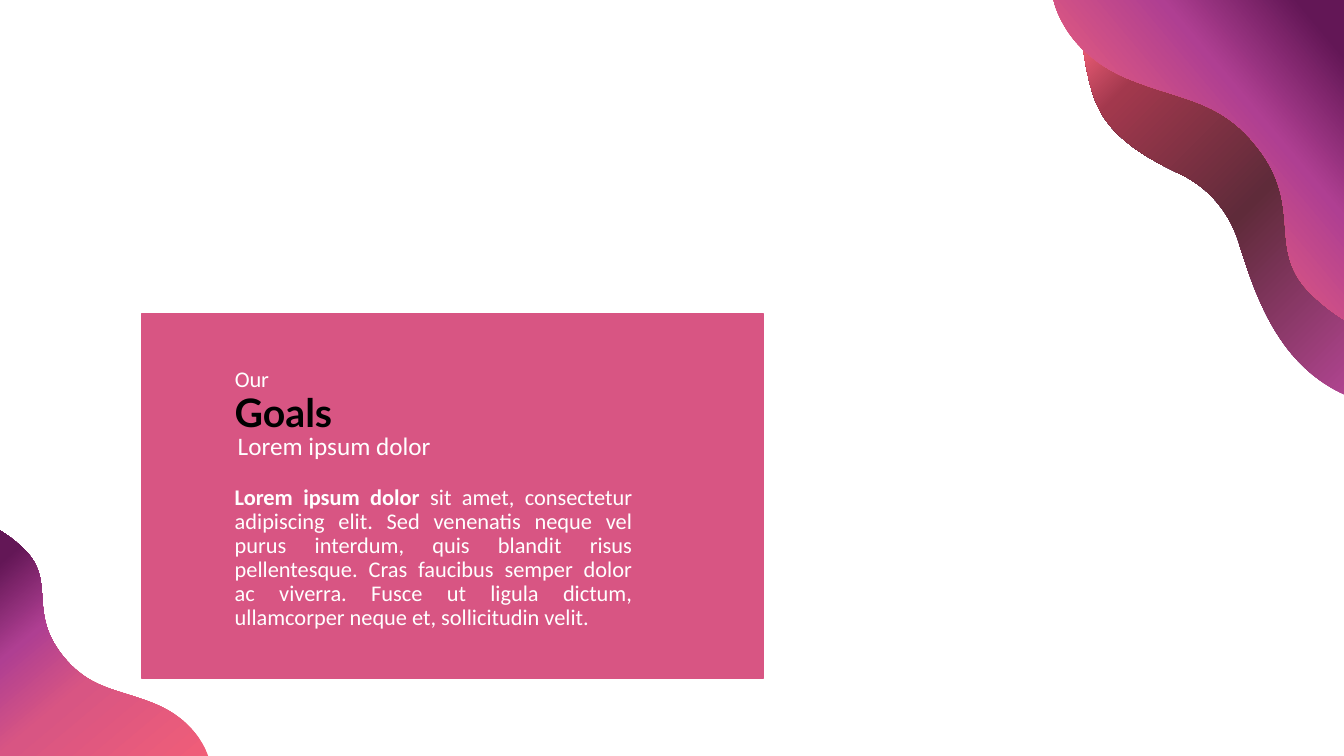
"""Build the "Our Goals" slide with a pink panel and wavy corner shapes."""
import copy

import lxml.etree
import pptx
import pptx.dml.color
import pptx.enum.shapes
import pptx.enum.text
import pptx.oxml.ns
import pptx.util

Inches = pptx.util.Inches
RGBColor = pptx.dml.color.RGBColor
qn = pptx.oxml.ns.qn

WHITE = RGBColor(0xFF, 0xFF, 0xFF)
BLACK = RGBColor(0x00, 0x00, 0x00)
PINK = RGBColor(0xD8, 0x55, 0x83)
CORAL = RGBColor(0xF1, 0x5E, 0x78)
ORCHID = RGBColor(0xAF, 0x3F, 0x92)
PLUM = RGBColor(0x63, 0x17, 0x56)
MAGENTA = RGBColor(0xB2, 0x45, 0x92)
MAROON = RGBColor(0x5F, 0x2B, 0x3A)
CRIMSON = RGBColor(0xA2, 0x38, 0x4D)
ROSE = RGBColor(0xF1, 0x5F, 0x79)

BRIGHT = [(0, CORAL), (0.44, PINK), (0.67, ORCHID), (0.91, PLUM)]
SHADED = [(0, MAGENTA), (0.44, MAROON), (0.8, CRIMSON), (0.94, ROSE)]

BACK_WAVE = [
    (10.72, 0), (10.72, 0), (10.69, 0.39), (10.82, 0.87),
    (10.9, 1.16), (11.06, 1.42), (11.67, 1.71),
    (12.03, 1.87), (12.22, 2.16), (12.3, 2.45),
    (12.48, 3.02), (12.72, 3.66), (13.39, 3.94),
]
FRONT_WAVE = [
    (10.45, 0), (10.45, 0), (10.55, 0.53), (11.21, 0.79),
    (11.73, 1), (12.11, 0.99), (12.48, 1.47),
    (12.95, 2.08), (12.54, 2.49), (13.03, 2.94),
    (13.21, 3.11), (13.38, 3.2), (13.38, 3.2),
]
LOWER_WAVE = [
    (2.08, 7.55), (2.08, 7.55), (2, 7.17), (1.53, 6.98),
    (1.16, 6.83), (0.88, 6.84), (0.61, 6.49),
    (0.27, 6.05), (0.57, 5.75), (0.22, 5.43),
    (0.08, 5.3), (-0.04, 5.24), (-0.04, 5.24),
]

BODY = [
    ("Lorem ipsum dolor ", True),
    ("sit amet, consectetur adipiscing elit. Sed venenatis neque vel purus "
     "interdum, quis blandit risus pellentesque. Cras faucibus semper dolor ac "
     "viverra. Fusce ut ligula dictum, ullamcorper neque et, sollicitudin velit.",
     False),
]


def bend_edge(sp, nodes):
    """Replace the first straight segment of a freeform with Bezier curves."""
    line = sp._element.find(".//" + qn("a:lnTo"))
    for i in range(1, len(nodes), 3):
        curve = lxml.etree.Element(qn("a:cubicBezTo"))
        for x, y in nodes[i:i + 3]:
            lxml.etree.SubElement(curve, qn("a:pt"), x=str(Inches(x) - sp.left),
                                  y=str(Inches(y) - sp.top))
        line.addprevious(curve)
    line.getparent().remove(line)


def add_wave(shapes, nodes, stops, angle):
    """Add a gradient shape between a wavy edge and its slide corner."""
    corner = (nodes[-1][0], nodes[0][1])
    start, end, corner = [(Inches(x), Inches(y)) for x, y in (nodes[0], nodes[-1], corner)]
    builder = shapes.build_freeform(*start)
    builder.add_line_segments([end, corner], close=True)
    sp = builder.convert_to_shape()
    bend_edge(sp, nodes)
    sp.shadow.inherit = False
    sp.line.fill.background()
    sp.fill.gradient()
    sp.fill.gradient_angle = angle
    stop_list = sp._element.find(".//" + qn("a:gsLst"))
    while len(stop_list) < len(stops):
        stop_list.append(copy.deepcopy(stop_list[0]))
    for stop, (position, color) in zip(sp.fill.gradient_stops, stops):
        stop.position = position
        stop.color.rgb = color


def add_panel(shapes, left, top, width, height):
    """Add the solid pink panel."""
    sp = shapes.add_shape(pptx.enum.shapes.MSO_SHAPE.RECTANGLE, Inches(left),
                          Inches(top), Inches(width), Inches(height))
    sp.shadow.inherit = False
    sp.fill.solid()
    sp.fill.fore_color.rgb = PINK
    sp.line.color.rgb = PINK
    sp.line.width = pptx.util.Pt(1)


def add_text(shapes, box, runs, size, font="Calibri", color=WHITE, wrap=True):
    """Add a one-paragraph text box and return its paragraph."""
    tf = shapes.add_textbox(*map(Inches, box)).text_frame
    tf.word_wrap = wrap
    p = tf.paragraphs[0]
    for text, bold in runs:
        r = p.add_run()
        r.text = text
        r.font.bold = bold
    p.font.name = font
    p.font.size = pptx.util.Pt(size)
    p.font.color.rgb = color
    return p


def main():
    """Build and save the slide."""
    prs = pptx.Presentation()
    prs.slide_width, prs.slide_height = Inches(13.33), Inches(7.5)
    s = prs.slides.add_slide(prs.slide_layouts[6])

    add_panel(s.shapes, 1.41, 3.11, 6.16, 3.62)
    body = add_text(s.shapes, (2.23, 4.77, 4.14, 3.25), BODY, 16)
    body.alignment = pptx.enum.text.PP_ALIGN.JUSTIFY
    body.line_spacing = 0.9

    heading = s.shapes.add_group_shape().shapes
    add_text(heading, (2.23, 3.8, 3.96, 0.57), [("Goals", True)], 28, "Lato", BLACK)
    add_text(heading, (2.23, 3.57, 0.55, 0.37), [("Our", False)], 16, wrap=False)
    add_text(heading, (2.26, 4.22, 2.23, 0.4), [("Lorem ipsum dolor", False)], 18,
             wrap=False)

    upper_waves = s.shapes.add_group_shape().shapes
    add_wave(upper_waves, BACK_WAVE, SHADED, 135)
    add_wave(upper_waves, FRONT_WAVE, BRIGHT, 40)
    add_wave(s.shapes, LOWER_WAVE, BRIGHT, 130)

    prs.save("out.pptx")


if __name__ == "__main__":
    main()
